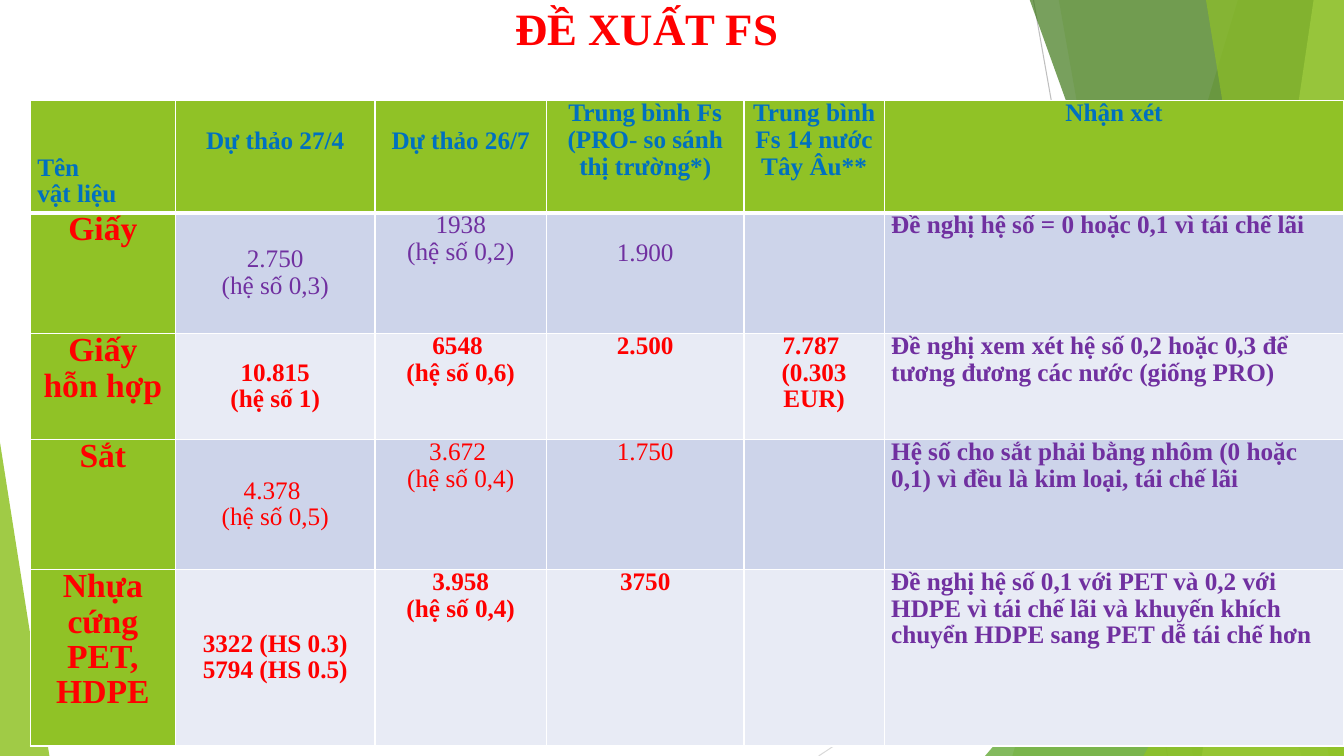
import pptx
import pptx.dml.color
import pptx.enum.shapes
import pptx.enum.text
import pptx.oxml
import pptx.oxml.ns
import pptx.util
import lxml.etree

Inches = pptx.util.Inches
Pt = pptx.util.Pt
RGBColor = pptx.dml.color.RGBColor
ALIGN = pptx.enum.text.PP_ALIGN
ANCHOR = pptx.enum.text.MSO_ANCHOR
SHAPE = pptx.enum.shapes.MSO_SHAPE
STRAIGHT = pptx.enum.shapes.MSO_CONNECTOR.STRAIGHT

WHITE = RGBColor(0xFF, 0xFF, 0xFF)
RED = RGBColor(0xFF, 0x00, 0x00)
BLUE = RGBColor(0x00, 0x70, 0xC0)
PURPLE = RGBColor(0x70, 0x30, 0xA0)
GREEN = RGBColor(0x90, 0xC2, 0x26)
LEAF = RGBColor(0x54, 0xA0, 0x21)
DARK = RGBColor(0x3F, 0x78, 0x19)
LIME = RGBColor(0xC0, 0xE4, 0x74)
BAND = RGBColor(0xCD, 0xD4, 0xEA)
PALE = RGBColor(0xE8, 0xEB, 0xF5)
GRAY = RGBColor(0xBF, 0xBF, 0xBF)
SILVER = RGBColor(0xD9, 0xD9, 0xD9)

WIDE, HIGH = 13.33, 7.5
COLS = [1.44, 1.98, 1.7, 1.96, 1.39, 4.56]
ROWS = [1.1, 1.2, 1.05, 1.29, 1.75]
LINE = 0.27

HEAD = ["Tên\nvật liệu", "Dự thảo 27/4", "Dự thảo 26/7",
        "Trung bình Fs (PRO- so sánh thị trường*)",
        "Trung bình Fs 14 nước Tây Âu**", "Nhận xét"]
BODY = [
    ["Giấy", "2.750\n(hệ số 0,3)", "1938\n(hệ số 0,2)", "1.900", "",
     "Đề nghị hệ số = 0 hoặc 0,1 vì tái chế lãi"],
    ["Giấy hỗn hợp", "10.815\n(hệ số 1)", "6548 \n(hệ số 0,6)", "2.500",
     "7.787 \n(0.303 EUR)",
     "Đề nghị xem xét hệ số 0,2 hoặc 0,3 để tương đương các nước (giống PRO)"],
    ["Sắt", "4.378 \n(hệ số 0,5)", "3.672 \n(hệ số 0,4)", "1.750", "",
     "Hệ số cho sắt phải bằng nhôm (0 hoặc 0,1) vì đều là kim loại, tái chế lãi"],
    ["Nhựa cứng PET, HDPE", "3322 (HS 0.3)\n5794 (HS 0.5)",
     "3.958\n(hệ số 0,4)", "3750", "",
     "Đề nghị hệ số 0,1 với PET và 0,2 với HDPE vì tái chế lãi và "
     "khuyến khích chuyển HDPE sang PET dễ tái chế hơn"],
]
DROPS = {(0, 0): 2, (0, 1): 1, (0, 2): 1, (1, 3): 1}


def apply(item, style):
    for name, value in style.items():
        setattr(item, name, value)


def write(frame, text, size, color, bold, align):
    frame.word_wrap = True
    frame.text = text
    for para in frame.paragraphs:
        apply(para, {"alignment": align, "line_spacing": 0.95})
        apply(para.font, {"name": "Times New Roman", "size": Pt(size), "bold": bold})
        para.font.color.rgb = color
        for run in para.runs:
            apply(run.font, {"name": "Times New Roman", "size": Pt(size), "bold": bold})
            run.font.color.rgb = color


def tint(shape, color, alpha):
    shape.shadow.inherit = False
    shape.fill.solid()
    shape.fill.fore_color.rgb = color
    shape.line.fill.background()
    node = shape.fill._xPr.find(".//" + pptx.oxml.ns.qn("a:srgbClr"))
    lxml.etree.SubElement(node, pptx.oxml.ns.qn("a:alpha"), val=str(alpha * 1000))


def facet(slide, top, base, color, alpha):
    pen = slide.shapes.build_freeform(Inches(top), Inches(-0.01))
    pen.add_line_segments([(Inches(x), Inches(y)) for x, y in
                           [(WIDE, -0.01), (WIDE, HIGH), (base, HIGH)]])
    tint(pen.convert_to_shape(), color, alpha)


def wedge(slide, left, top, width, tip, color, alpha):
    shape = slide.shapes.add_shape(SHAPE.ISOSCELES_TRIANGLE, Inches(left), Inches(top),
                                   Inches(width), Inches(HIGH - top))
    shape.adjustments[0] = tip
    tint(shape, color, alpha)


def rule(slide, start, end, color):
    line = slide.shapes.add_connector(STRAIGHT, *map(Inches, start + end))
    line.line.color.rgb = color
    line.line.width = Pt(0.75)
    lxml.etree.SubElement(line._element.spPr, pptx.oxml.ns.qn("a:effectLst"))


def border(cell, row):
    heavy = {"T": row == 1, "B": row == 0}
    for spot, side in enumerate("LRTB"):
        width = Pt(3 if heavy.get(side) else 1)
        edge = pptx.oxml.parse_xml(
            f'<a:ln{side} {pptx.oxml.ns.nsdecls("a")} w="{width}"><a:solidFill>'
            f'<a:srgbClr val="{WHITE}"/></a:solidFill></a:ln{side}>')
        cell._tc.get_or_add_tcPr().insert(spot, edge)


def look(row, col):
    align = ALIGN.LEFT if col == 5 or (row, col) == (0, 0) else ALIGN.CENTER
    if row == 0:
        return 18, BLUE, True, ALIGN.CENTER if col else align
    if col == 0:
        return 24, RED, True, align
    color = PURPLE if row == 1 or col == 5 else RED
    return 18, color, row % 2 == 0 or col == 5, align


def grid(slide):
    table = slide.shapes.add_table(len(ROWS), len(COLS), Inches(0.3), Inches(1),
                                   Inches(sum(COLS)), Inches(sum(ROWS))).table
    table.horz_banding = False
    for col, width in zip(table.columns, COLS):
        col.width = Inches(width)
    for row, height in zip(table.rows, ROWS):
        row.height = Inches(height)
    for r, texts in enumerate([HEAD] + BODY):
        for c, text in enumerate(texts):
            cell = table.cell(r, c)
            middle = r > 0 and c == 1
            apply(cell, {
                "margin_left": Inches(0.07), "margin_right": Inches(0.07),
                "margin_top": Inches(LINE * DROPS.get((r, c), 0)), "margin_bottom": 0,
                "vertical_anchor": ANCHOR.MIDDLE if middle else ANCHOR.TOP})
            cell.fill.solid()
            cell.fill.fore_color.rgb = GREEN if r == 0 or c == 0 else BAND if r % 2 else PALE
            border(cell, r)
            write(cell.text_frame, text, *look(r, c))


def title(slide):
    box = slide.shapes.add_textbox(Inches(0.26), 0, Inches(12.31), Inches(0.6))
    box.text_frame.vertical_anchor = ANCHOR.MIDDLE
    write(box.text_frame, "ĐỀ XUẤT FS", 32, RED, True, ALIGN.CENTER)


def decor(slide):
    rule(slide, (10.25, 0), (11.58, HIGH), GRAY)
    rule(slide, (WIDE, 4.03), (8.12, HIGH), SILVER)
    facet(slide, 12.28, 10.04, GREEN, 30)
    facet(slide, 10.5, 11.83, GREEN, 20)
    wedge(slide, 9.77, 3.33, 3.56, 1, LEAF, 72)
    facet(slide, 10.21, 12.91, DARK, 70)
    facet(slide, 13.03, 11.92, LIME, 70)
    facet(slide, 11.96, 13.18, GREEN, 65)
    wedge(slide, 11.34, 3.93, 1.99, 1, GREEN, 80)
    wedge(slide, 0, 4.39, 0.49, 0, GREEN, 85)


def main():
    deck = pptx.Presentation()
    apply(deck, {"slide_width": Inches(WIDE), "slide_height": Inches(HIGH)})
    slide = deck.slides.add_slide(deck.slide_layouts[6])
    decor(slide)
    title(slide)
    grid(slide)
    deck.save("out.pptx")


if __name__ == "__main__":
    main()
